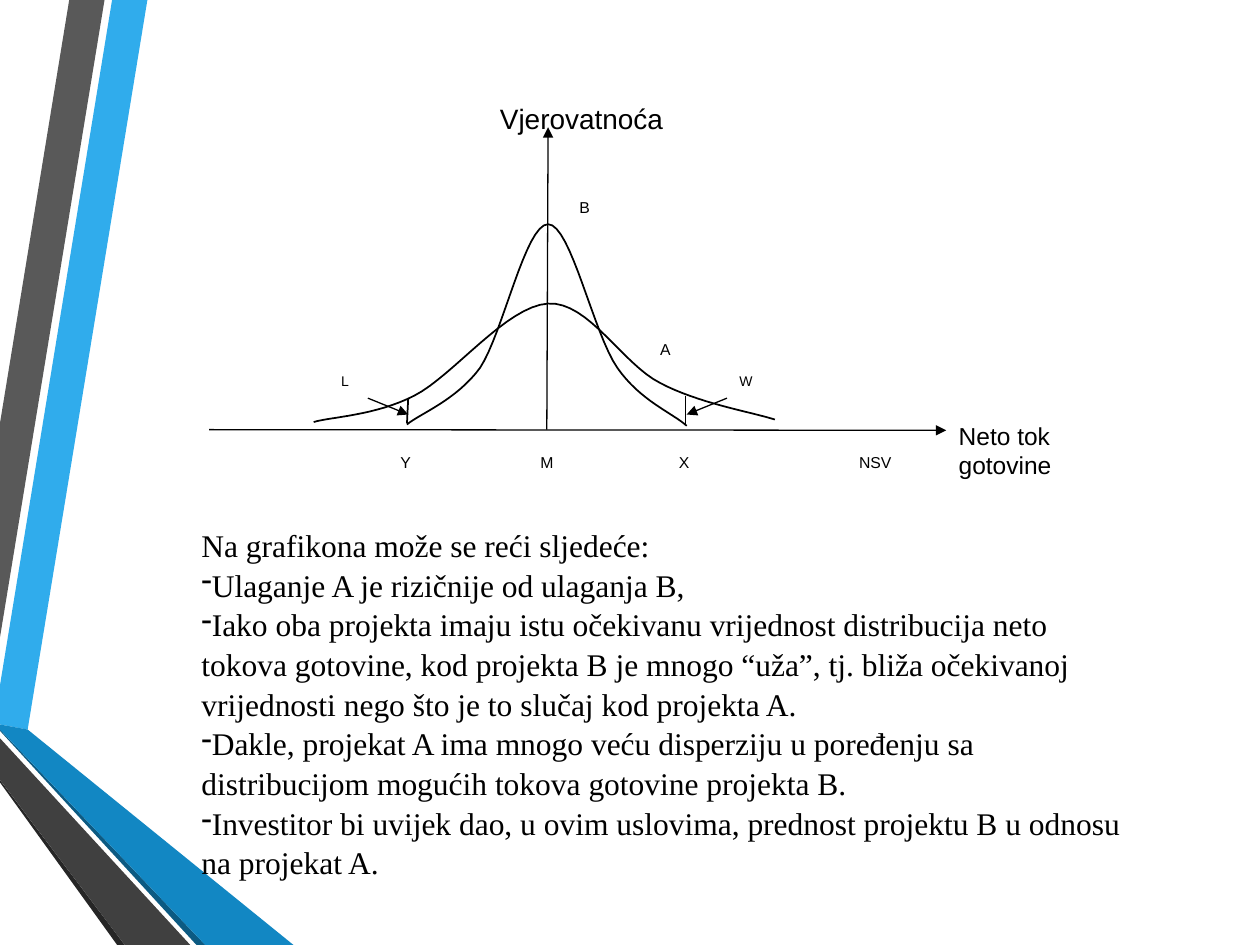
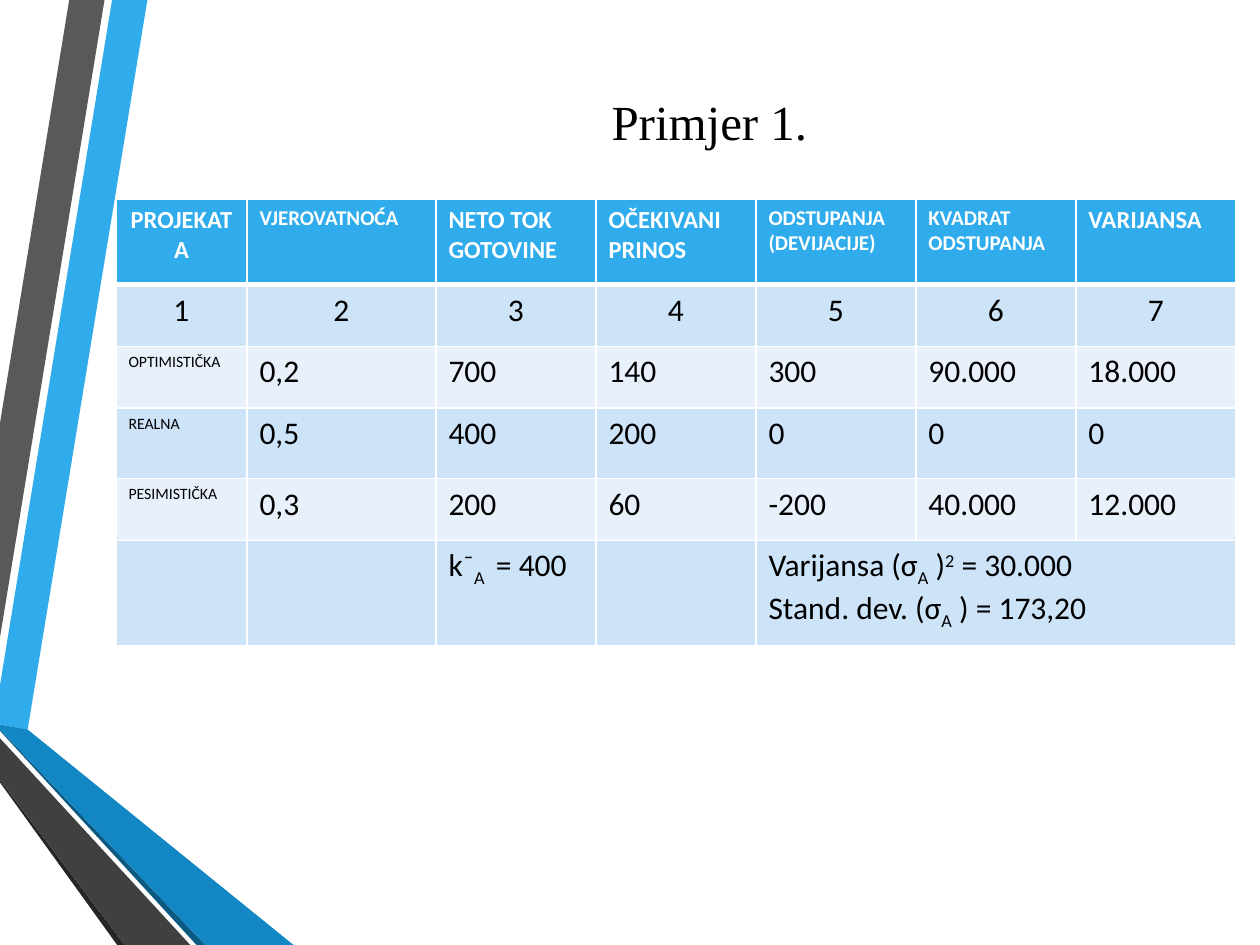
"""Build two slides on project risk: distribution curves and a variance table."""
from pptx import Presentation
from pptx.dml.color import RGBColor
from pptx.enum.shapes import MSO_CONNECTOR as Link, MSO_SHAPE as Kind
from pptx.enum.text import MSO_ANCHOR as Anchor, PP_ALIGN as Align
from pptx.oxml.ns import qn
from pptx.util import Pt
from lxml.etree import SubElement as Sub

PX = 9144
BLACK, WHITE, SKY = "000000", "FFFFFF", "30ACEC"
SERIF, SANS, BODY = "Times New Roman", "Arial", "Calibri"
hue = RGBColor.from_string


def draw(slide, pts, fill=None, close=True):
    """Draw an outline through px points, filled or as a black line."""
    spots = [(round(x * PX), round(y * PX)) for x, y in pts]
    pen = slide.shapes.build_freeform(*spots[0], scale=1.0)
    pen.add_line_segments(spots[1:], close=close)
    form = pen.convert_to_shape()
    form.shadow.inherit = False
    if fill:
        form.fill.solid()
        form.fill.fore_color.rgb = hue(fill)
        form.line.fill.background()
    else:
        form.fill.background()
        form.line.color.rgb = hue(BLACK)
        form.line.width = Pt(1)


def write(para, text, size, font, color=BLACK, bold=False, base=0):
    """Add one run to a paragraph."""
    run = para.add_run()
    run.text = text
    run.font.size = Pt(size)
    run.font.name = font
    run.font.bold = bold
    run.font.color.rgb = hue(color)
    if base:
        run.font._element.set("baseline", str(base * 1000))


deck = Presentation()
deck.slide_width, deck.slide_height = 1000 * PX, 750 * PX

bands = [
    (SKY, [(0, 544), (0, 575), (22, 579), (117, 0), (89, 0)]),
    ("595959", [(83, 0), (55, 0), (0, 336), (0, 506)]),
    ("262626", [(0, 619), (0, 621), (93, 750), (99, 750)]),
    ("0C5A82", [(0, 579), (0, 580), (156, 750), (163, 750)]),
    ("1287C3", [(0, 579), (163, 750), (233, 750), (22, 579), (0, 575)]),
    ("404040", [(0, 619), (99, 750), (151, 750), (0, 586)]),
]
slides = [deck.slides.add_slide(deck.slide_layouts[6]) for _ in range(2)]
for slide in slides:
    for fill, pts in bands:
        draw(slide, pts, fill)
graph, sheet = slides

curves = [
    [(323, 337), (332, 329), (362, 318), (381, 292), (399, 265), (417, 178), (435, 178),
     (453, 178), (471, 265), (490, 292), (508, 318), (534, 328), (545, 338)],
    [(249, 335), (262, 331), (298, 330), (329, 314), (360, 298), (402, 243), (435, 241),
     (467, 239), (494, 289), (524, 304), (554, 320), (596, 327), (615, 333)],
]
for knots in curves:
    pts = knots[:1]
    for i in range(0, len(knots) - 1, 3):
        for step in range(1, 17):
            t = step / 16
            mix = ((1 - t) ** 3, 3 * t * (1 - t) ** 2, 3 * t * t * (1 - t), t ** 3)
            pts.append([sum(m * k[d] for m, k in zip(mix, knots[i:i + 4])) for d in (0, 1)])
    draw(graph, pts, close=False)

labels = [
    ("Neto tok gotovine", 751, 329, 142, 14), ("Vjerovatnoća", 387, 76, 180, 16),
    ("B", 450, 152, 32, 9), ("A", 514, 265, 32, 9),
    ("X", 529, 354, 32, 9), ("Y", 308, 354, 32, 9), ("M", 419, 354, 32, 9),
    ("NSV", 672, 354, 63, 9), ("W", 577, 291, 32, 8), ("L", 261, 291, 32, 8),
]
tags = {}
for text, x, y, wide, size in labels:
    tag = graph.shapes.add_shape(Kind.RECTANGLE, x * PX, y * PX, wide * PX, 25 * PX)
    tag.shadow.inherit = False
    tag.fill.solid()
    tag.fill.fore_color.rgb = hue(WHITE)
    tag.line.color.rgb = hue(WHITE)
    tag.line.width = Pt(0.25 if size == 8 else 0.75)
    frame = tag.text_frame
    frame.word_wrap = True
    frame.vertical_anchor = Anchor.TOP
    frame.paragraphs[0].alignment = Align.LEFT
    write(frame.paragraphs[0], text, size, SANS)
    tags[text] = tag

lines = [
    (166, 341, 751, 341, True, "Neto tok gotovine"),
    (434, 341, 435, 101, True, None),
    (323, 336, 324, 316, False, None),
    (544, 337, 544, 314, False, None),
    (292, 316, 324, 329, True, None),
    (577, 316, 545, 329, True, None),
]
for x1, y1, x2, y2, arrow, goal in lines:
    line = graph.shapes.add_connector(Link.STRAIGHT, x1 * PX, y1 * PX, x2 * PX, y2 * PX)
    if goal:
        line.end_connect(tags[goal], 1)
    line.line.color.rgb = hue(BLACK)
    line.line.width = Pt(0.75 if arrow else 1)
    if arrow:
        Sub(line.line._get_or_add_ln(), qn("a:tailEnd"), type="triangle")
    Sub(line._element.spPr, qn("a:effectLst"))

points = [
    "Na grafikona može se reći sljedeće:",
    "Ulaganje A je rizičnije od ulaganja B,",
    "Iako oba projekta imaju istu očekivanu vrijednost distribucija neto tokova gotovine, "
    "kod projekta B je mnogo “uža”, tj. bliža očekivanoj vrijednosti nego što je to slučaj "
    "kod projekta A.",
    "Dakle, projekat A ima mnogo veću disperziju u poređenju sa distribucijom mogućih "
    "tokova gotovine projekta B.",
    "Investitor bi uvijek dao, u ovim uslovima, prednost projektu B u odnosu na projekat A.",
]
frame = graph.shapes.add_textbox(150 * PX, 411 * PX, 759 * PX, 284 * PX).text_frame
frame.word_wrap = True
for i, text in enumerate(points):
    para = frame.add_paragraph() if i else frame.paragraphs[0]
    para.line_spacing = 1.05
    if i:
        Sub(para._p.get_or_add_pPr(), qn("a:buChar"), char="-")
    write(para, text, 18, SERIF)

frame = sheet.shapes.add_textbox(167 * PX, 67 * PX, 792 * PX, 58 * PX).text_frame
frame.word_wrap = True
frame.vertical_anchor = Anchor.MIDDLE
frame.paragraphs[0].alignment = Align.CENTER
write(frame.paragraphs[0], "Primjer 1.", 28, SERIF)

heads = ["PROJEKAT A", "VJEROVATNOĆA", "NETO TOK GOTOVINE", "OČEKIVANI PRINOS",
         "ODSTUPANJA (DEVIJACIJE)", "KVADRAT ODSTUPANJA", "VARIJANSA"]
small = {1, 4, 5}
rows = [
    heads,
    list("1234567"),
    ["OPTIMISTIČKA", "0,2", "700", "140", "300", "90.000", "18.000"],
    ["REALNA", "0,5", "400", "200", "0", "0", "0"],
    ["PESIMISTIČKA", "0,3", "200", "60", "-200", "40.000", "12.000"],
    [""] * 7,
]
wides = [104, 150] + [127] * 5
highs = [68, 49, 49, 56, 49, 84]
grid = sheet.shapes.add_table(6, 7, 92 * PX, 158 * PX, sum(wides) * PX, sum(highs) * PX).table
for col, wide in zip(grid.columns, wides):
    col.width = wide * PX
for r, row in enumerate(rows):
    grid.rows[r].height = highs[r] * PX
    for c, text in enumerate(row):
        cell = grid.cell(r, c)
        for side in "LRTB":
            thick = 3 if (r, side) in ((0, "B"), (1, "T")) else 1
            edge = Sub(cell._tc.get_or_add_tcPr(), qn("a:ln" + side), w=str(Pt(thick)))
            Sub(Sub(edge, qn("a:solidFill")), qn("a:srgbClr"), val=WHITE)
        cell.fill.solid()
        cell.fill.fore_color.rgb = hue(("CDE3F8" if r % 2 else "E8F1FB") if r else SKY)
        para = cell.text_frame.paragraphs[0]
        if r == 1 or (r, c) == (0, 0):
            para.alignment = Align.CENTER
        if r == 0:
            write(para, text, 12 if c in small else 14, BODY, WHITE, True)
        elif text:
            write(para, text, 9 if r > 1 and c == 0 else 18, BODY)

grid.cell(5, 4).merge(grid.cell(5, 6))
sums = {
    2: [[("k⁻", 0), ("A ", -25), (" = 400", 0)]],
    4: [[("Varijansa (σ", 0), ("A", -25), (" )", 0), ("2", 30), (" = 30.000", 0)],
        [("Stand. dev. (σ", 0), ("A", -25), (" ) = 173,20", 0)]],
}
for c, paras in sums.items():
    frame = grid.cell(5, c).text_frame
    for i, runs in enumerate(paras):
        para = frame.add_paragraph() if i else frame.paragraphs[0]
        for text, base in runs:
            write(para, text, 18, BODY, base=base)

deck.save("out.pptx")
